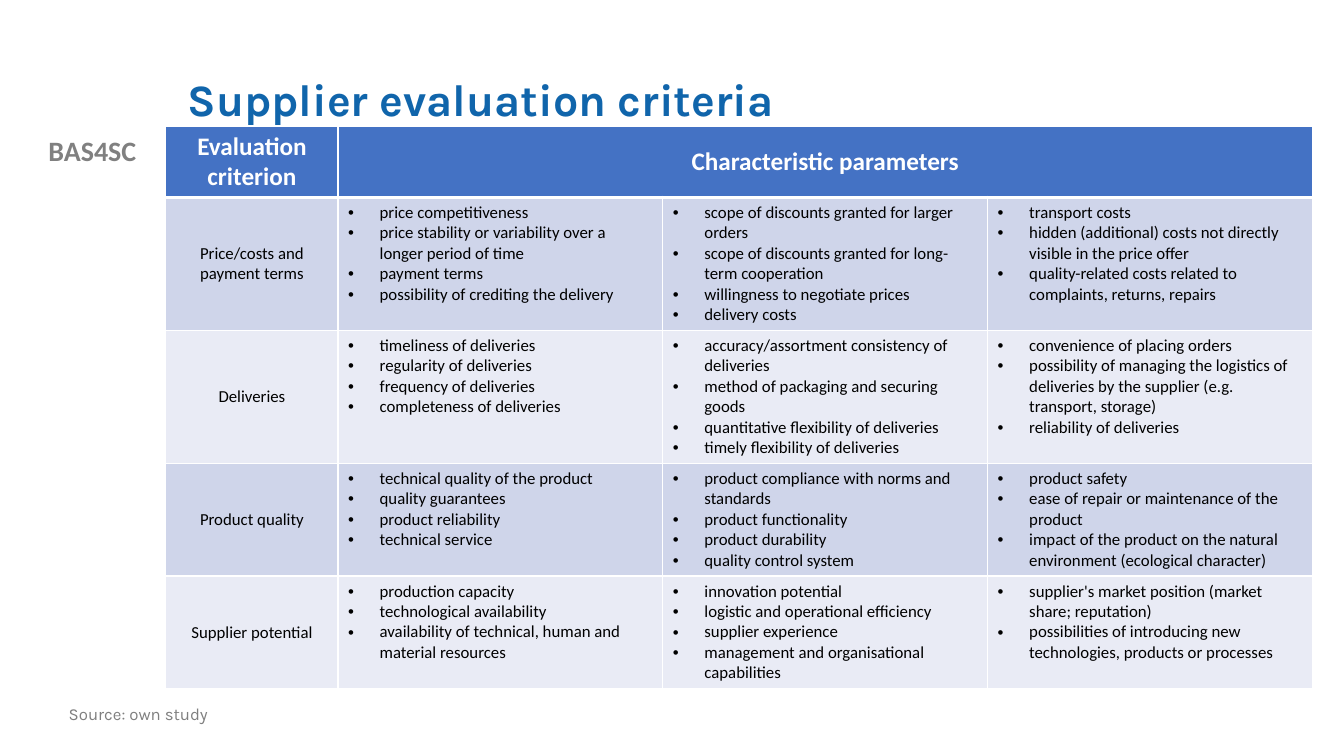
"""Build the slide that lists supplier evaluation criteria."""
import pptx
import pptx.dml.color
import pptx.enum.text
import pptx.oxml
import pptx.oxml.ns
import pptx.util

Pt = pptx.util.Pt
RGBColor = pptx.dml.color.RGBColor
Align = pptx.enum.text.PP_ALIGN
Anchor = pptx.enum.text.MSO_ANCHOR

WHITE = RGBColor(0xFF, 0xFF, 0xFF)
BLACK = RGBColor(0x00, 0x00, 0x00)
GREY = RGBColor(0x80, 0x80, 0x80)
CAPTION_GREY = RGBColor(0x7F, 0x7F, 0x7F)
TITLE_BLUE = RGBColor(0x10, 0x65, 0xAB)
HEADER_BLUE = RGBColor(0x44, 0x72, 0xC4)
BANDS = (RGBColor(0xCF, 0xD5, 0xEA), RGBColor(0xE9, 0xEB, 0xF5))

COLUMN_WIDTHS = (123, 232, 232, 232)
ROW_HEIGHTS = (51, 95, 95, 80.5, 80.5)
BULLET_INDENT = 22.5

CRITERIA = (
    ("Price/costs and payment terms",
     ("price competitiveness",
      "price stability or variability over a longer period of time",
      "payment terms",
      "possibility of crediting the delivery"),
     ("scope of discounts granted for larger orders",
      "scope of discounts granted for long-term cooperation",
      "willingness to negotiate prices",
      "delivery costs"),
     ("transport costs",
      "hidden (additional) costs not directly visible in the price offer",
      "quality-related costs related to complaints, returns, repairs")),
    ("Deliveries",
     ("timeliness of deliveries",
      "regularity of deliveries",
      "frequency of deliveries",
      "completeness of deliveries"),
     ("accuracy/assortment consistency of deliveries",
      "method of packaging and securing goods",
      "quantitative flexibility of deliveries",
      "timely flexibility of deliveries"),
     ("convenience of placing orders",
      "possibility of managing the logistics of deliveries by the supplier "
      "(e.g. transport, storage)",
      "reliability of deliveries")),
    ("Product quality",
     ("technical quality of the product",
      "quality guarantees",
      "product reliability",
      "technical service"),
     ("product compliance with norms and standards",
      "product functionality",
      "product durability",
      "quality control system"),
     ("product safety",
      "ease of repair or maintenance of the product",
      "impact of the product on the natural environment (ecological character)")),
    ("Supplier potential",
     ("production capacity",
      "technological availability",
      "availability of technical, human and material resources"),
     ("innovation potential",
      "logistic and operational efficiency",
      "supplier experience",
      "management and organisational capabilities"),
     ("supplier's market position (market share; reputation)",
      "possibilities of introducing new technologies, products or processes")),
)


def add_run(paragraph, text, size, color, font="Calibri", bold=False):
    run = paragraph.add_run()
    run.text = text
    run.font.name = font
    run.font.size = Pt(size)
    run.font.bold = bold
    run.font.color.rgb = color


def add_title(slide, text):
    title = slide.shapes.title
    title.left, title.top, title.width, title.height = Pt(126.7), Pt(28.8), Pt(767.5), Pt(87.8)
    frame = title.text_frame
    frame.auto_size = pptx.enum.text.MSO_AUTO_SIZE.NONE
    frame.vertical_anchor = Anchor.MIDDLE
    paragraph = frame.paragraphs[0]
    paragraph.alignment = Align.LEFT
    paragraph.line_spacing = 0.9
    add_run(paragraph, text, 32, TITLE_BLUE, "Karla", True)


def add_text(slide, left, top, width, height, alignment):
    frame = slide.shapes.add_textbox(Pt(left), Pt(top), Pt(width), Pt(height)).text_frame
    frame.word_wrap = True
    paragraph = frame.paragraphs[0]
    paragraph.alignment = alignment
    return paragraph


def add_bullet(paragraph):
    properties = paragraph._p.get_or_add_pPr()
    properties.set("marL", str(Pt(BULLET_INDENT)))
    properties.set("indent", str(-Pt(BULLET_INDENT)))
    for tag, name, value in (("buFont", "typeface", "Arial"), ("buChar", "char", "•")):
        element = pptx.oxml.parse_xml(
            f'<a:{tag} {pptx.oxml.ns.nsdecls("a")} {name}="{value}"/>')
        properties.append(element)


def style_cell(cell, fill, top=1, bottom=1):
    cell.fill.solid()
    cell.fill.fore_color.rgb = fill
    properties = cell._tc.get_or_add_tcPr()
    borders = (("lnL", 1), ("lnR", 1), ("lnT", top), ("lnB", bottom))
    for position, (tag, width) in enumerate(borders):
        line = pptx.oxml.parse_xml(
            f'<a:{tag} {pptx.oxml.ns.nsdecls("a")} w="{Pt(width)}">'
            f'<a:solidFill><a:srgbClr val="{WHITE}"/></a:solidFill></a:{tag}>')
        properties.insert(position, line)


def fill_label(cell, text, size, color, bold=False):
    cell.vertical_anchor = Anchor.MIDDLE
    paragraph = cell.text_frame.paragraphs[0]
    paragraph.alignment = Align.CENTER
    add_run(paragraph, text, size, color, bold=bold)


def fill_list(cell, items):
    frame = cell.text_frame
    for index, item in enumerate(items):
        paragraph = frame.add_paragraph() if index else frame.paragraphs[0]
        add_bullet(paragraph)
        add_run(paragraph, item, 12, BLACK)


def add_criteria_table(slide):
    table = slide.shapes.add_table(
        len(ROW_HEIGHTS), len(COLUMN_WIDTHS), Pt(118.5), Pt(90),
        Pt(sum(COLUMN_WIDTHS)), Pt(sum(ROW_HEIGHTS))).table
    for column, width in zip(table.columns, COLUMN_WIDTHS):
        column.width = Pt(width)
    for row, height in zip(table.rows, ROW_HEIGHTS):
        row.height = Pt(height)

    for cell in table.rows[0].cells:
        style_cell(cell, HEADER_BLUE, bottom=3)
    table.cell(0, 1).merge(table.cell(0, 3))
    fill_label(table.cell(0, 0), "Evaluation criterion", 18, WHITE, True)
    fill_label(table.cell(0, 1), "Characteristic parameters", 18, WHITE, True)

    for row, (criterion, *parameter_lists) in enumerate(CRITERIA, start=1):
        for cell in table.rows[row].cells:
            style_cell(cell, BANDS[(row - 1) % 2], top=3 if row == 1 else 1)
        fill_label(table.cell(row, 0), criterion, 12, BLACK)
        for column, items in enumerate(parameter_lists, start=1):
            fill_list(table.cell(row, column), items)


def main():
    presentation = pptx.Presentation()
    presentation.slide_width = Pt(960)
    presentation.slide_height = Pt(540)
    slide = presentation.slides.add_slide(presentation.slide_layouts.get_by_name("Title Only"))
    label = add_text(slide, 0, 92, 132, 31.5, Align.CENTER)
    add_run(label, "BAS4SC", 20, GREY, bold=True)
    add_title(slide, "Supplier evaluation criteria")
    caption = add_text(slide, 42, 501, 425, 25, Align.LEFT)
    caption.line_spacing = 0.9
    add_run(caption, "Source: own study", 12, CAPTION_GREY, "Karla")
    add_criteria_table(slide)
    presentation.save("out.pptx")


if __name__ == "__main__":
    main()
